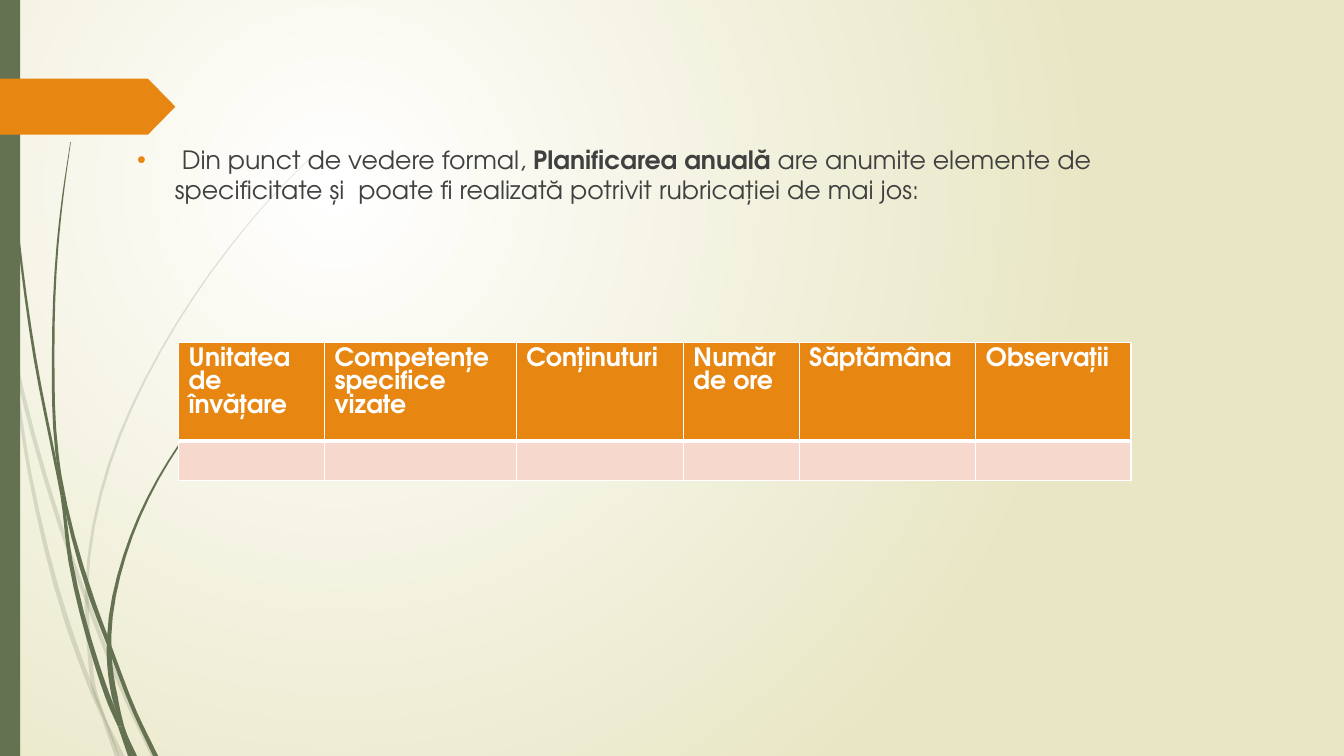
from lxml import etree
from pptx import Presentation
from pptx.dml.color import RGBColor
from pptx.enum.lang import MSO_LANGUAGE_ID
from pptx.enum.shapes import MSO_SHAPE
from pptx.enum.text import MSO_ANCHOR, PP_ALIGN
from pptx.oxml.ns import qn
from pptx.util import Pt

RECTANGLE, ARROW_TAG = MSO_SHAPE.RECTANGLE, MSO_SHAPE.PENTAGON
TOP, LEFT = MSO_ANCHOR.TOP, PP_ALIGN.LEFT
ROMANIAN = MSO_LANGUAGE_ID.ROMANIAN

WHITE = RGBColor(0xFF, 0xFF, 0xFF)
CREAM = RGBColor(0xE8, 0xE6, 0xC4)
GREEN = RGBColor(0x64, 0x72, 0x52)
ORANGE = RGBColor(0xE7, 0x87, 0x12)
PINK = RGBColor(0xF6, 0xD9, 0xCC)
DARK_GRAY = RGBColor(0x40, 0x40, 0x40)
FONT = "TeX Gyre Adventor"
SLIDE_WIDTH, SLIDE_HEIGHT = 960, 540
CURVE_STEPS = 4

# Grass stems: centre x, y and horizontal width along each stem,
# then the indexes of the points where the stem is cut into blades
PALE_STEMS = [
    ([(1, 209, 2), (9, 250, 3), (43, 375, 3), (61, 426, 3), (90, 499, 3),
      (109.5, 540, 3.5)], (1, 3)),
    ([(9, 256, 2), (21.2, 338, 2.5), (48.5, 446, 3.5), (66.5, 495, 3.5),
      (74, 513, 2.5), (85.5, 540, 7)], (4,)),
    ([(224.5, 110, 0.5), (193, 142, 0.7), (164.5, 176, 1), (114.5, 251, 1.3),
      (78, 332, 2), (62, 420, 2), (62, 434, 3), (64, 465, 3), (68, 495, 3),
      (74, 511, 2), (85, 540, 0.5)], (5, 6, 8)),
]
DARK_STEMS = [
    ([(2.5, 0, 0.7), (5.5, 79, 0.8), (13, 168, 1.5), (25, 256, 2),
      (40.5, 335, 2), (44.2, 354, 2), (50.4, 401, 3), (69, 474, 3.5),
      (79.5, 504, 4), (86, 519, 3.5), (94.7, 540, 6.5)], (4, 5, 9)),
    ([(50.4, 101.5, 0.4), (45, 139, 1), (41, 176, 1.4), (38, 251, 1.8),
      (40.7, 324, 2.2), (43, 340, 2), (65, 426, 3.5), (78, 461, 3),
      (96.5, 509, 3), (111.2, 540, 3.6)], (5, 7)),
    ([(187.5, 248, 0.7), (166.5, 269, 0.9), (147, 292, 1.2), (113, 342, 1.6),
      (89, 397, 2.2), (78, 455, 3), (78, 468, 3.5), (82, 498, 4.3),
      (87.5, 518, 2), (95.5, 540, 2)], (5, 6, 7)),
]

BODY_TEXT = [
    (" Din punct de vedere formal, ", False),
    ("Planificarea anuală ", True),
    ("are anumite elemente de specificitate și  poate fi realizată "
     "potrivit rubricaţiei de mai jos:", False),
]
HEADERS = ["Unitatea de învăţare", "Competenţe specifice vizate", "Conţinuturi",
           "Număr de ore", "Săptămâna", "Observaţii"]
COLUMN_WIDTHS = [104.2, 137, 119.4, 82.7, 126.2, 110.8]
ROW_HEIGHTS = [70.3, 28.1]


def add_text(paragraph, text, size=18, color=DARK_GRAY, bold=False):
    run = paragraph.add_run()
    run.text = text
    run.font.name = FONT
    run.font.size = Pt(size)
    run.font.bold = bold
    run.font.color.rgb = color
    run.font.language_id = ROMANIAN


def paint(shape, color, opacity=100):
    shape.shadow.inherit = False
    shape.fill.solid()
    shape.fill.fore_color.rgb = color
    shape.line.fill.background()
    if opacity < 100:
        color_element = shape.fill._xPr.find(".//" + qn("a:srgbClr"))
        alpha = etree.SubElement(color_element, qn("a:alpha"))
        alpha.set("val", str(opacity * 1000))


def smooth(points):
    """Pass a cubic curve, with x as a function of y, through the points."""
    gaps = [b[1] - a[1] for a, b in zip(points, points[1:])]
    secants = [(b[0] - a[0]) / gap for a, b, gap in zip(points, points[1:], gaps)]
    inner = [(gaps[i + 1] * secants[i] + gaps[i] * secants[i + 1])
             / (gaps[i] + gaps[i + 1]) for i in range(len(gaps) - 1)]
    slopes = [secants[0], *inner, secants[-1]]
    curve = []
    for i, gap in enumerate(gaps):
        (x0, y0, width0), (x1, _, width1) = points[i:i + 2]
        for step in range(CURVE_STEPS):
            t = step / CURVE_STEPS
            blend = t * t * (3 - 2 * t)
            x = (x0 + (x1 - x0) * blend + gap * t * (1 - t)
                 * (slopes[i] * (1 - t) - slopes[i + 1] * t))
            curve.append((x, y0 + gap * t, width0 + (width1 - width0) * t))
    return curve + [points[-1]]


def add_blade(slide, curve, opacity):
    outline = [(x - width / 2, y) for x, y, width in curve]
    outline += [(x + width / 2, y) for x, y, width in reversed(curve)]
    outline = [(Pt(x), Pt(y)) for x, y in outline]
    builder = slide.shapes.build_freeform(*outline[0])
    builder.add_line_segments(outline[1:], close=True)
    paint(builder.convert_to_shape(), GREEN, opacity)


def add_stem(slide, points, cuts, opacity):
    curve = smooth(points)
    ends = [0, *cuts, len(points) - 1]
    for first, last in zip(ends, ends[1:]):
        add_blade(slide, curve[first * CURVE_STEPS:last * CURVE_STEPS + 1], opacity)


def add_background(slide):
    fill = slide.background.fill
    fill.gradient()
    for stop, color, position in zip(fill.gradient_stops, (WHITE, CREAM), (0, 1)):
        stop.color.rgb = color
        stop.position = position
    gradient = slide.background._cSld.find(".//" + qn("a:gradFill"))
    linear = gradient.find(qn("a:lin"))
    radial = etree.Element(qn("a:path"), {"path": "circle"})
    etree.SubElement(radial, qn("a:fillToRect"),
                     {"l": "50000", "t": "50000", "r": "100000", "b": "100000"})
    gradient.replace(linear, radial)


def add_decoration(slide, left, top, height):
    for stems, opacity in ((PALE_STEMS, 20), (DARK_STEMS, 100)):
        for points, cuts in stems:
            add_stem(slide, points, cuts, opacity)
    # Side band and arrow tag
    band = slide.shapes.add_shape(RECTANGLE, Pt(left), Pt(top), Pt(14.4), Pt(height))
    paint(band, GREEN)
    tag = slide.shapes.add_shape(ARROW_TAG, Pt(left), Pt(top + 56.2),
                                 Pt(125.3), Pt(40))
    tag.adjustments[0] = 0.49
    paint(tag, ORANGE)


def add_body(slide, left, top, width, height):
    body = slide.placeholders[1]
    body.left, body.top, body.width, body.height = map(Pt, (left, top, width, height))
    slide.shapes._spTree.append(body.element)
    body.text_frame.word_wrap = True
    body.text_frame.vertical_anchor = TOP
    paragraph = body.text_frame.paragraphs[0]
    paragraph.alignment = LEFT
    paragraph.space_before = Pt(10)
    for text, bold in BODY_TEXT:
        add_text(paragraph, text, bold=bold)
    # Orange bullet with a hanging indent
    properties = paragraph._p.get_or_add_pPr()
    properties.set("marL", str(Pt(27)))
    properties.set("indent", str(-Pt(27)))
    bullet_color = etree.SubElement(properties, qn("a:buClr"))
    etree.SubElement(bullet_color, qn("a:srgbClr"), val=str(ORANGE))
    etree.SubElement(properties, qn("a:buFont"), typeface="Arial")
    etree.SubElement(properties, qn("a:buChar"), char="•")


def set_borders(cell, top, bottom):
    properties = cell._tc.get_or_add_tcPr()
    for side, width in (("L", 1), ("R", 1), ("T", top), ("B", bottom)):
        line = etree.SubElement(properties, qn("a:ln" + side), w=str(Pt(width)))
        fill = etree.SubElement(line, qn("a:solidFill"))
        etree.SubElement(fill, qn("a:srgbClr"), val=str(WHITE))


def add_plan_table(slide, left, top):
    frame = slide.shapes.add_table(
        len(ROW_HEIGHTS), len(HEADERS), Pt(left), Pt(top),
        Pt(sum(COLUMN_WIDTHS)), Pt(sum(ROW_HEIGHTS)))
    table = frame.table
    for row, height in zip(table.rows, ROW_HEIGHTS):
        row.height = Pt(height)
    for index, (header, width) in enumerate(zip(HEADERS, COLUMN_WIDTHS)):
        table.columns[index].width = Pt(width)
        header_cell, empty_cell = table.cell(0, index), table.cell(1, index)
        set_borders(header_cell, top=1, bottom=3)
        set_borders(empty_cell, top=3, bottom=1)
        empty_cell.margin_top = empty_cell.margin_bottom = Pt(0)
        for cell, color in ((header_cell, ORANGE), (empty_cell, PINK)):
            cell.fill.solid()
            cell.fill.fore_color.rgb = color
        add_text(header_cell.text_frame.paragraphs[0], header, color=WHITE, bold=True)


def main():
    presentation = Presentation()
    presentation.slide_width = Pt(SLIDE_WIDTH)
    presentation.slide_height = Pt(SLIDE_HEIGHT)
    slide = presentation.slides.add_slide(presentation.slide_layouts[1])
    title = slide.shapes.title.element
    title.getparent().remove(title)
    add_background(slide)
    add_decoration(slide, 0, 0, SLIDE_HEIGHT)
    add_body(slide, 90.7, 99.4, 731.5, 376.6)
    add_plan_table(slide, 127.6, 244.8)
    presentation.save("out.pptx")


if __name__ == "__main__":
    main()
